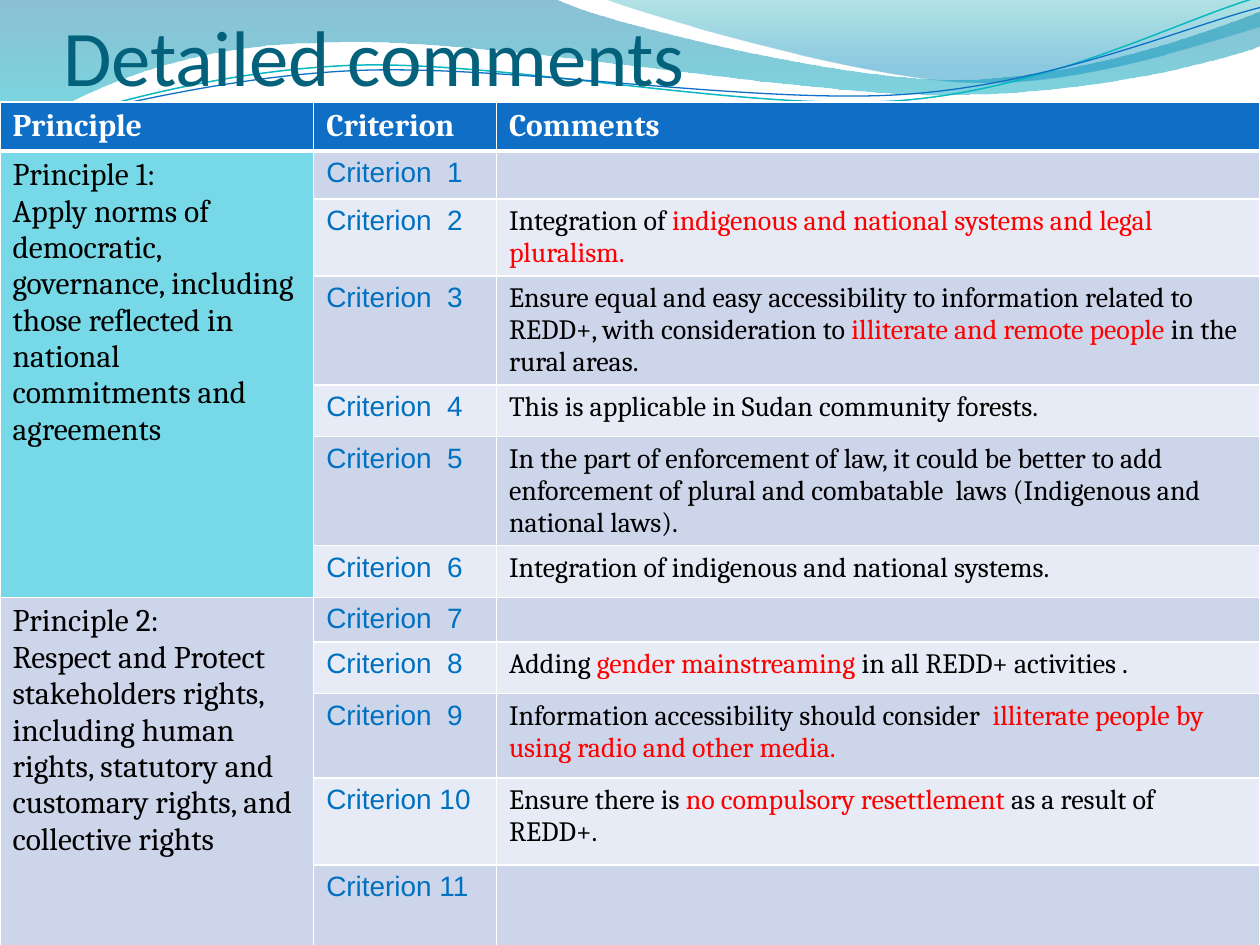
import pptx
import pptx.dml.color
import pptx.enum.text
import pptx.oxml
import pptx.oxml.ns
import pptx.util
from lxml import etree
from pptx.util import Inches

BLUE, LABEL_BLUE, RED = "0F6FC6", "0070C0", "FF0000"
BLACK, WHITE = "000000", "FFFFFF"
CYAN, BAND_DARK, BAND_LIGHT = "77D9E8", "CCD5EA", "E7EBF5"

# Wave outlines: a start point, then straight (x, y) or Bezier (six numbers) steps
WIDE_WAVE = [(0, -0.01), (4.4, -0.01), (4.76, 0.17, 6.64, 0.63, 7.58, 0.63),
             (8.53, 0.63, 9.58, 0.26, 10, 0.09), (10.01, 0.36),
             (9.83, 0.44, 8.7, 0.76, 7.46, 0.75),
             (6.22, 0.75, 3.82, 0.28, 2.57, 0.34),
             (1.29, 0.35, 0.46, 0.83, -0.01, 1.13)]
RIGHT_WAVE = [(4.79, -0.01), (5.09, 0.11, 6.82, 0.62, 7.69, 0.65),
              (8.56, 0.69, 9.61, 0.32, 10, 0.21), (10, 0)]
TEAL_LINE = [(0, 1.11), (0.48, 0.93, 1.58, 0.57, 2.77, 0.52),
             (3.95, 0.47, 5.93, 0.89, 7.13, 0.8),
             (8.33, 0.71, 9.38, 0.15, 9.98, -0.02)]
BLUE_LINE = [(0, 1.04), (0.47, 0.96, 1.64, 0.61, 2.83, 0.56),
             (4.03, 0.51, 5.97, 0.83, 7.17, 0.75),
             (8.36, 0.67, 9.41, 0.21, 10, 0.06)]

# Comments by criterion: a list of (text, colour) runs
COMMENTS = [
    [],
    [("Integration of", BLACK),
     (" indigenous and national systems and legal pluralism.", RED)],
    [("Ensure equal and easy accessibility to information related to REDD+, "
      "with consideration to ", BLACK),
     ("illiterate and remote people ", RED), ("in the rural areas.", BLACK)],
    [("This is applicable in Sudan community forests.", BLACK)],
    [("In the part of enforcement of law, it could be better to add enforcement "
      "of plural and combatable  laws (Indigenous and national laws).", BLACK)],
    [("Integration of indigenous and national systems.", BLACK)],
    [],
    [("Adding ", BLACK), ("gender mainstreaming ", RED),
     ("in all REDD+ activities .", BLACK)],
    [("Information accessibility should consider  ", BLACK),
     ("illiterate people by using radio and other media.", RED)],
    [("Ensure there is ", BLACK), ("no compulsory resettlement ", RED),
     ("as a result of REDD+.", BLACK)],
    [],
]
# Principles: first row, last row, fill, paragraphs
PRINCIPLES = [
    (1, 6, CYAN, ["Principle 1:",
                  "Apply norms of democratic, governance, including those "
                  "reflected in national commitments and agreements"]),
    (7, 11, BAND_DARK, ["Principle 2:",
                        "Respect and Protect stakeholders rights, including human "
                        "rights, statutory and customary rights, and collective rights"]),
]
COL_WIDTHS = [2.49, 1.45, 6.06]
ROW_HEIGHTS = [0.38, 0.38, 0.6, 0.86, 0.41, 0.86, 0.41, 0.35, 0.41, 0.67, 0.69, 0.69]


def rgb(value):
    return pptx.dml.color.RGBColor.from_string(value)


class Deck:
    heading_font, body_font, label_font = "Calibri", "Cambria", "Arial"

    def __init__(self, width, height):
        self.prs = pptx.Presentation()
        self.prs.slide_width, self.prs.slide_height = Inches(width), Inches(height)
        self.slide = self.prs.slides.add_slide(self.prs.slide_layouts[5])

    def font(self, p, name, size, color, bold=False):
        p.font.name, p.font.size, p.font.bold = name, pptx.util.Pt(size), bold
        p.font.color.rgb = rgb(color)

    def outline(self, steps, closed):
        ends = [(Inches(step[-2]), Inches(step[-1])) for step in steps]
        builder = self.slide.shapes.build_freeform(*ends[0])
        builder.add_line_segments(ends[1:], close=closed)
        sp = builder.convert_to_shape()
        sp.shadow.inherit = False
        # Bend the segments that have control points
        qn = pptx.oxml.ns.qn
        for step, segment in zip(steps[1:], list(sp.element.iter(qn("a:lnTo")))):
            if len(step) == 6:
                segment.tag = qn("a:cubicBezTo")
                for i, (x, y) in enumerate((step[:2], step[2:4])):
                    pt = etree.Element(qn("a:pt"), x=str(Inches(x) - sp.left),
                                       y=str(Inches(y) - sp.top))
                    segment.insert(i, pt)
        return sp

    def wave(self, steps, stops):
        """Filled wave; stops are (position %, colour, opacity %)."""
        sp = self.outline(steps, True)
        sp.line.fill.background()
        gs = "".join(f'<a:gs pos="{pos * 1000}"><a:srgbClr val="{color}">'
                     f'<a:alpha val="{alpha * 1000}"/></a:srgbClr></a:gs>'
                     for pos, color, alpha in stops)
        grad = pptx.oxml.parse_xml(
            f'<a:gradFill {pptx.oxml.ns.nsdecls("a")} rotWithShape="1">'
            f'<a:gsLst>{gs}</a:gsLst><a:lin ang="5400000" scaled="0"/></a:gradFill>')
        sp.element.spPr.find(pptx.oxml.ns.qn("a:custGeom")).addnext(grad)

    def curve(self, steps, color, width):
        sp = self.outline(steps, False)
        sp.fill.background()
        sp.line.color.rgb = rgb(color)
        sp.line.width = pptx.util.Pt(width)

    def title(self, text, left, top, width, height):
        sp = self.slide.shapes.title
        sp.left, sp.top, sp.width, sp.height = map(Inches, (left, top, width, height))
        tf = sp.text_frame
        tf.text = text
        tf.vertical_anchor = pptx.enum.text.MSO_ANCHOR.BOTTOM
        tf.margin_left = tf.margin_right = tf.margin_bottom = 0
        tf.margin_top = Inches(0.05)
        tf.auto_size = pptx.enum.text.MSO_AUTO_SIZE.NONE
        p = tf.paragraphs[0]
        p.alignment = pptx.enum.text.PP_ALIGN.LEFT
        self.font(p, self.heading_font, 45, "04617B")
        self.slide.shapes.element.append(sp.element)  # in front of the waves

    def table(self, left, top, widths, heights):
        table = self.slide.shapes.add_table(
            len(heights), len(widths), Inches(left), Inches(top),
            Inches(sum(widths)), Inches(sum(heights))).table
        table.horz_banding = False
        for column, width in zip(table.columns, widths):
            column.width = Inches(width)
        for row, height in zip(table.rows, heights):
            row.height = Inches(height)
        return table

    def cell(self, cell, paragraphs, fill, name, size, color, bold=False, top=1, bottom=1):
        """Fill a cell; each paragraph is a text or a list of (text, colour) runs."""
        tf = cell.text_frame
        for i, content in enumerate(paragraphs):
            p = tf.add_paragraph() if i else tf.paragraphs[0]
            self.font(p, name, size, color, bold)
            if isinstance(content, str):
                p.text = content
                continue
            for text, run_color in content:
                r = p.add_run()
                r.text = text
                r.font.color.rgb = rgb(run_color)
            if not content:
                etree.SubElement(p._p, pptx.oxml.ns.qn("a:endParaRPr"), sz=str(size * 100))
        self.borders(cell, top, bottom)
        cell.fill.solid()
        cell.fill.fore_color.rgb = rgb(fill)

    def borders(self, cell, top, bottom):
        tc_pr = cell._tc.get_or_add_tcPr()
        for side, width in (("L", 1), ("R", 1), ("T", top), ("B", bottom)):
            tc_pr.append(pptx.oxml.parse_xml(
                f'<a:ln{side} {pptx.oxml.ns.nsdecls("a")} w="{width * 12700}"><a:solidFill>'
                f'<a:srgbClr val="{WHITE}"/></a:solidFill></a:ln{side}>'))


def main():
    deck = Deck(10, 7.5)

    # Wave background
    deck.wave(WIDE_WAVE, [(0, "0074A1", 45), (100, "00C6CF", 55)])
    deck.wave(RIGHT_WAVE, [(0, "00A1A9", 30), (80, "008BBF", 45)])
    deck.curve(TEAL_LINE, "0AB8BF", 0.85)
    deck.curve(BLUE_LINE, BLUE, 0.75)

    deck.title("Detailed comments", 0.5, 0, 9, 0.81)

    # Table header
    table = deck.table(0, 0.81, COL_WIDTHS, ROW_HEIGHTS)
    for col, heading in enumerate(["Principle", "Criterion", "Comments"]):
        deck.cell(table.cell(0, col), [heading], BLUE, deck.body_font, 18, WHITE,
                  bold=True, bottom=3)

    # Criteria and comments
    for row, comment in enumerate(COMMENTS, start=1):
        fill = BAND_DARK if row % 2 else BAND_LIGHT
        top = 3 if row == 1 else 1
        deck.cell(table.cell(row, 1), [f"Criterion {row:>2}"], fill,
                  deck.label_font, 16, LABEL_BLUE, top=top)
        deck.cell(table.cell(row, 2), [comment], fill, deck.body_font, 16, BLACK, top=top)

    # Principles spanning their criteria
    for first, last, fill, paragraphs in PRINCIPLES:
        table.cell(first, 0).merge(table.cell(last, 0))
        deck.cell(table.cell(first, 0), paragraphs, fill, deck.body_font, 18, BLACK,
                  top=3 if first == 1 else 1)

    deck.prs.save("out.pptx")


if __name__ == "__main__":
    main()
